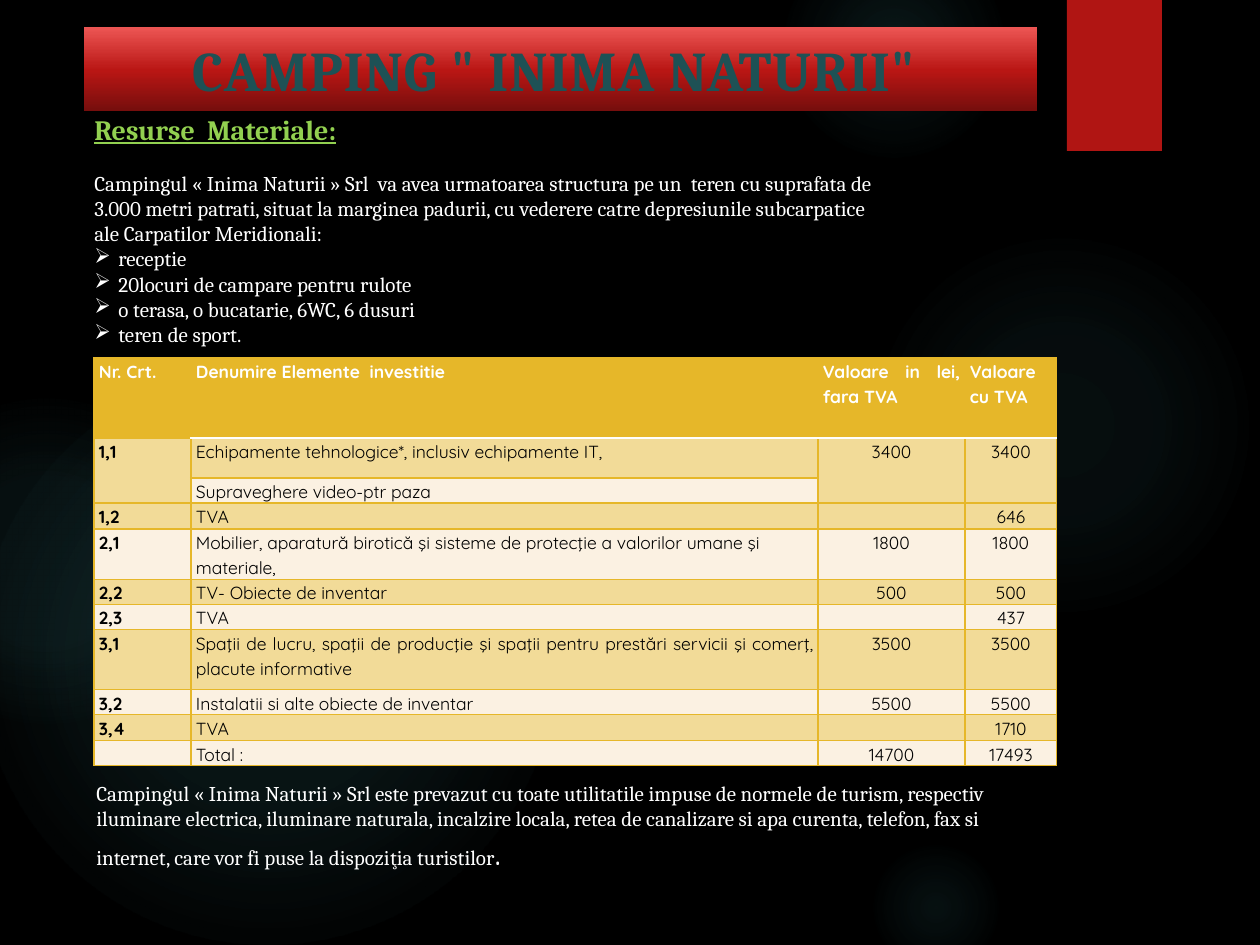
from dataclasses import dataclass
from typing import Any, NamedTuple

from lxml.etree import SubElement
from pptx import Presentation
from pptx.dml.color import RGBColor
from pptx.enum.shapes import MSO_SHAPE
from pptx.enum.text import MSO_ANCHOR, PP_ALIGN
from pptx.oxml import parse_xml
from pptx.oxml.ns import nsdecls, qn
from pptx.util import Emu, Pt


@dataclass(frozen=True)
class Theme:
    """Colours, fonts and type sizes of the slide."""

    bg: str = "000000"
    glow: str = "50B9C1"
    tab: str = "B01513"
    title: str = "1E5155"
    heading: str = "92D050"
    light: str = "FFFFFF"
    dark: str = "000000"
    gold: str = "E6B729"
    band: str = "F2DB98"
    plain: str = "FBF1E2"
    serif: str = "Cambria"
    sans: str = "Quicksand"
    title_size: int = 32
    heading_size: int = 16
    body_size: int = 12
    stop_size: int = 20
    table_size: int = 10


class Box(NamedTuple):
    """A rectangle in px."""

    x: int
    y: int
    w: int
    h: int


class Stop(NamedTuple):
    """A gradient stop with position and opacity in percent."""

    pos: int
    color: str
    alpha: int = 100


class Glow(NamedTuple):
    """A soft round light: inner, middle opacity and its fade-out position."""

    x: int
    y: int
    d: int
    inner: int
    middle: int
    fade: int


class Row(NamedTuple):
    """A table row with its height in px."""

    h: int
    cells: tuple[str, str, str, str]
    align: Any = PP_ALIGN.JUSTIFY
    anchor: Any = MSO_ANCHOR.TOP


T = Theme()
RADIAL = '<a:path path="circle"><a:fillToRect l="50000" t="50000" r="50000" b="50000"/></a:path>'
LINEAR = '<a:lin ang="16200000" scaled="0"/>'
GLOWS = (
    Glow(868, 231, 388, 7, 6, 69),
    Glow(784, -63, 220, 14, 7, 73),
    Glow(868, 840, 136, 9, 5, 66),
    Glow(-21, 368, 577, 11, 10, 75),
    Glow(-116, 399, 325, 8, 8, 72),
)
TITLE_STOPS = (Stop(0, "760E0D"), Stop(48, "B91614"), Stop(100, "ED5654"))
COLS = (97, 627, 147, 92)
ROWS = (
    Row(80, ("Nr. Crt.", "Denumire Elemente  investitie", "Valoare in lei, fara TVA", "Valoare cu TVA")),
    Row(40, ("1,1", "Echipamente tehnologice*, inclusiv echipamente IT,", "3400", "3400")),
    Row(25, ("", "Supraveghere video-ptr paza", "", "")),
    Row(26, ("1,2", "TVA", "", "646")),
    Row(50, ("2,1", "Mobilier, aparatură birotică şi sisteme de protecţie a valorilor umane şi materiale,",
             "1800", "1800"), PP_ALIGN.LEFT),
    Row(25, ("2,2", "TV- Obiecte de inventar", "500", "500")),
    Row(25, ("2,3", "TVA", "", "437")),
    Row(60, ("3,1", "Spaţii de lucru, spaţii de producţie şi spaţii pentru prestări servicii şi comerţ, "
             "placute informative", "3500", "3500")),
    Row(25, ("3,2", "Instalatii si alte obiecte de inventar", "5500", "5500")),
    Row(26, ("3,4", "TVA", "", "1710")),
    Row(25, ("", "Total\u00a0:", "14700", "17493"), anchor=MSO_ANCHOR.MIDDLE),
)
INTRO = ("Campingul «\u00a0Inima Naturii\u00a0» Srl  va avea urmatoarea structura pe un  teren cu suprafata de "
         "3.000 metri patrati, situat la marginea padurii, cu vederere catre depresiunile subcarpatice ale "
         "Carpatilor Meridionali:")
FACILITIES = ("receptie", "20locuri de campare pentru rulote", "o terasa, o bucatarie, 6WC, 6 dusuri",
              "teren de sport.")
CLOSING = ("Campingul «\u00a0Inima Naturii\u00a0» Srl este prevazut cu toate utilitatile impuse de normele de "
           "turism, respectiv iluminare electrica, iluminare naturala, incalzire locala, retea de canalizare si "
           "apa curenta, telefon, fax si internet, care vor fi puse la dispoziţia turistilor")


def px(n: int) -> Emu:
    """Turn px into EMU."""
    return Emu(round(n * 914400 / 126))


def add_run(p: Any, text: str, color: str, **fmt: Any) -> Any:
    """Add a formatted run to a paragraph."""
    r = p.add_run()
    r.text = text
    for name, value in fmt.items():
        setattr(r.font, name, value)
    r.font.color.rgb = RGBColor.from_string(color)
    return r


def add_shape(s: Any, kind: Any, box: Box, color: str = T.bg) -> Any:
    """Add a flat shape without outline or shadow."""
    sp = s.shapes.add_shape(kind, *map(px, box))
    sp.shadow.inherit = False
    sp.fill.solid()
    sp.fill.fore_color.rgb = RGBColor.from_string(color)
    sp.line.fill.background()
    return sp


def set_gradient(sp: Any, stops: tuple[Stop, ...], direction: str) -> None:
    """Swap the solid fill of a shape for a gradient."""
    gs = "".join(f'<a:gs pos="{t.pos * 1000}"><a:srgbClr val="{t.color}">'
                 f'<a:alpha val="{t.alpha * 1000}"/></a:srgbClr></a:gs>' for t in stops)
    spPr = sp._element.spPr
    spPr.replace(spPr.find(qn("a:solidFill")), parse_xml(
        f'<a:gradFill {nsdecls("a")} rotWithShape="1"><a:gsLst>{gs}</a:gsLst>{direction}</a:gradFill>'))


def add_text(s: Any, box: Box) -> Any:
    """Add a wrapping text box and return its frame."""
    tf = s.shapes.add_textbox(*map(px, box)).text_frame
    tf.word_wrap = True
    return tf


def set_bullet(p: Any, indent: int) -> None:
    """Give a paragraph an arrow bullet with a hanging indent."""
    pPr = p._p.get_or_add_pPr()
    pPr.set("marL", str(px(indent)))
    pPr.set("indent", str(-px(indent)))
    SubElement(pPr, qn("a:buChar")).set("char", "➢")


def set_borders(cell: Any, sides: dict[str, tuple[str, float]]) -> None:
    """Draw the cell borders given as side, colour and width."""
    tcPr = cell._tc.get_or_add_tcPr()
    for i, (side, (color, width)) in enumerate(sides.items()):
        tcPr.insert(i, parse_xml(
            f'<a:ln{side} {nsdecls("a")} w="{Pt(width)}"><a:solidFill><a:srgbClr val="{color}"/>'
            f'</a:solidFill></a:ln{side}>'))


def fill_cell(cell: Any, row: Row, i: int, j: int) -> None:
    """Write and format one table cell."""
    head = i == 0
    for side in ("left", "right"):
        setattr(cell, f"margin_{side}", px(5))
    cell.margin_top = cell.margin_bottom = 0
    cell.vertical_anchor = row.anchor
    cell.fill.solid()
    cell.fill.fore_color.rgb = RGBColor.from_string(T.gold if head else T.band if i % 2 else T.plain)
    thin = (T.gold, 0.75)
    set_borders(cell, {
        "L": (T.gold, 1.5) if j == 1 else thin,
        "R": (T.gold, 1.5) if j == 0 else thin,
        "T": (T.light, 1.5) if i == 1 and j else thin,
        "B": (T.light, 1.5) if head and j else thin,
    })
    p = cell.text_frame.paragraphs[0]
    p.alignment = row.align if head or j < 2 else PP_ALIGN.CENTER
    p.line_spacing = 1.15
    if row.cells[j]:
        add_run(p, row.cells[j], T.light if head else T.dark,
                name=T.sans, size=Pt(T.table_size), bold=head or j == 0)
    else:
        SubElement(p._p, qn("a:endParaRPr")).set("sz", str(T.table_size * 100))


def add_costs(s: Any, x: int, y: int) -> None:
    """Add the investment table."""
    box = Box(x, y, sum(COLS), sum(r.h for r in ROWS))
    table = s.shapes.add_table(len(ROWS), len(COLS), *map(px, box)).table
    for col, w in zip(table.columns, COLS):
        col.width = px(w)
    for i, row in enumerate(ROWS):
        table.rows[i].height = px(row.h)
        for j in range(len(COLS)):
            fill_cell(table.cell(i, j), row, i, j)
    for j in (0, 2, 3):
        table.cell(1, j).merge(table.cell(2, j))


def main() -> None:
    """Build the slide and save it."""
    prs = Presentation()
    prs.slide_width, prs.slide_height = px(1260), px(945)
    s = prs.slides.add_slide(prs.slide_layouts[6])
    s.background.fill.solid()
    s.background.fill.fore_color.rgb = RGBColor.from_string(T.bg)

    for g in GLOWS:
        stops = (Stop(0, T.glow, g.inner), Stop(36, T.glow, g.middle), Stop(g.fade, T.glow, 0))
        set_gradient(add_shape(s, MSO_SHAPE.OVAL, Box(g.x, g.y, g.d, g.d)), stops, RADIAL)
    add_shape(s, MSO_SHAPE.RECTANGLE, Box(1067, 0, 95, 151), T.tab)

    sp = add_shape(s, MSO_SHAPE.RECTANGLE, Box(84, 27, 953, 84))
    set_gradient(sp, TITLE_STOPS, LINEAR)
    p = sp.text_frame.paragraphs[0]
    p.alignment = PP_ALIGN.CENTER
    r = add_run(p, 'CAMPING " INIMA NATURII" ', T.title, name=T.serif, size=Pt(T.title_size), bold=True)
    r.font._element.set("spc", "50")

    add_costs(s, 94, 358)

    body = {"name": T.serif, "size": Pt(T.body_size)}
    tf = add_text(s, Box(82, 106, 824, 280))
    add_run(tf.paragraphs[0], "Resurse  Materiale:", T.heading,
            name=T.serif, size=Pt(T.heading_size), bold=True, underline=True)
    p = tf.add_paragraph()
    p.space_before = Pt(14)
    add_run(p, INTRO, T.light, **body)
    for item in FACILITIES:
        p = tf.add_paragraph()
        set_bullet(p, 24)
        add_run(p, item, T.light, **body)

    p = add_text(s, Box(84, 774, 973, 144)).paragraphs[0]
    add_run(p, CLOSING, T.light, **body)
    add_run(p, ".", T.light, name=T.sans, size=Pt(T.stop_size))
    prs.save("out.pptx")


if __name__ == "__main__":
    main()
